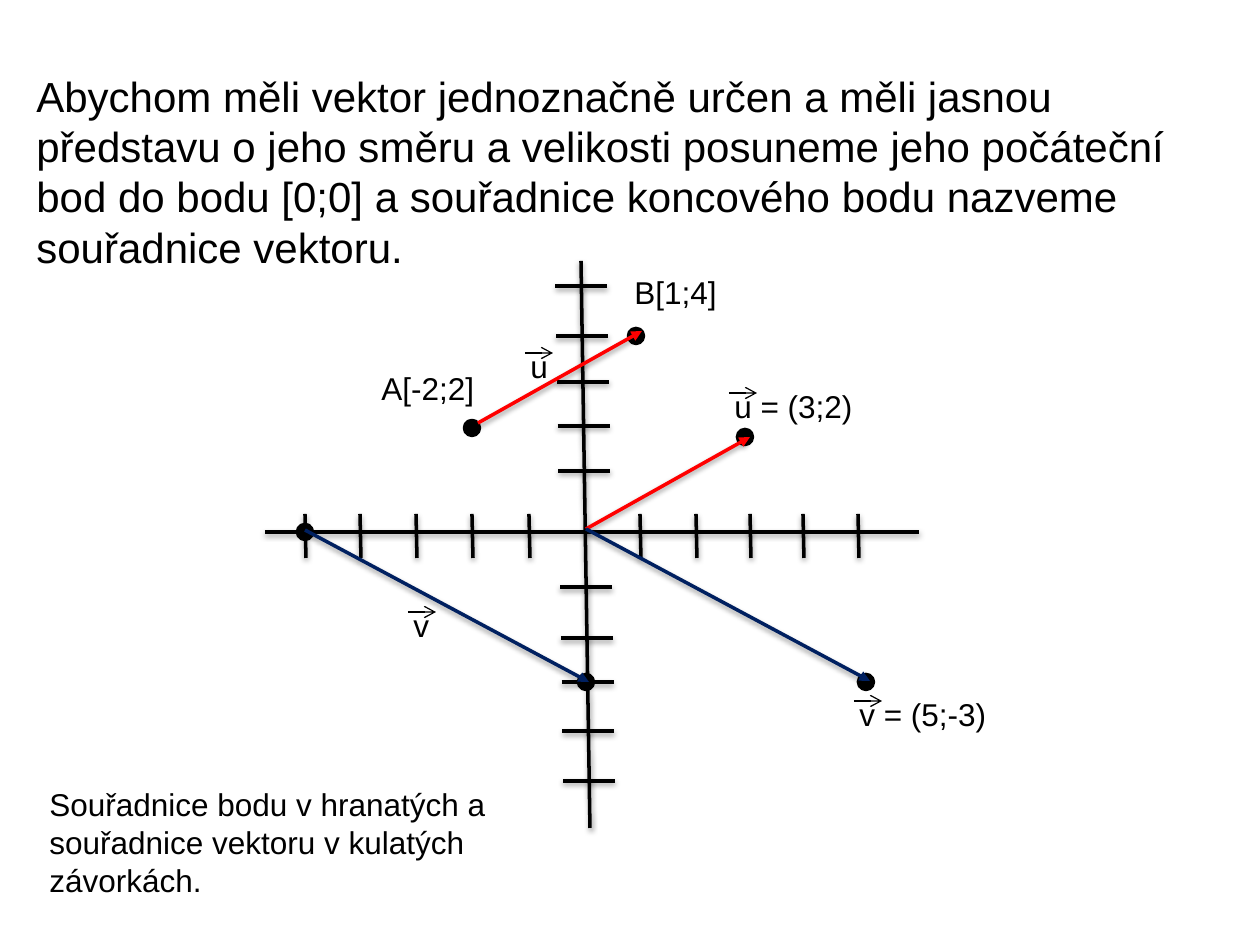
from lxml.etree import SubElement
from pptx import Presentation
from pptx.dml.color import RGBColor
from pptx.enum.shapes import MSO_CONNECTOR, MSO_SHAPE
from pptx.enum.text import MSO_AUTO_SIZE
from pptx.oxml.ns import qn
from pptx.util import Pt

PX = 9144000 / 1260
COLORS = {"ink": "000000", "u": "FF0000", "v": "002060"}
DIAGRAM = (265, 261, 654, 567)
INTRO = (24, 64, 1210, 217)
NOTE = (37, 779, 474, 127)

# Diagram positions are px from the top left corner of its box.
X_AXIS_TOP = 271
Y_AXIS_START, Y_AXIS_SLANT = 316, 9
X_TICKS = (40, 95, 151, 207, 264, 375, 431, 485, 538, 593)
Y_TICKS = (25, 75, 121, 165, 210, 326, 377, 421, 470, 520)
X_TICK_LENGTH, Y_TICK_LENGTH = 44, 52
DOT = 15
DOTS = ((601, 421), (40, 271), (321, 421), (480, 176), (207, 167), (371, 75))
VECTOR_STEPS = {"u": (164, -92), "v": (284, 152)}
VECTORS = (("u", 213, 162), ("u", 321, 268), ("v", 40, 269), ("v", 321, 268))
POINT_LABELS = (("A[-2;2]", 104, 102, 120), ("B[1;4]", 357, 6, 108))
VECTOR_LABELS = (("u", 253, 80, 43), ("u = (3;2)", 457, 120, 150),
                 ("v", 136, 339, 42), ("v = (5;-3)", 582, 428, 154))
LABEL_HEIGHT = 50


def emu(*pixels):
    return [round(pixel * PX) for pixel in pixels]


def color(name):
    return RGBColor.from_string(COLORS[name])


def add_text(slide, box, lines, size=18, wrap=False):
    frame = slide.shapes.add_textbox(*emu(*box)).text_frame
    frame.word_wrap = wrap
    frame.auto_size = MSO_AUTO_SIZE.SHAPE_TO_FIT_TEXT
    frame.text = "\n".join(lines)
    font_format = {"name": "Arial", "size": Pt(size)}
    for paragraph in frame.paragraphs:
        for run in paragraph.runs:
            for attribute, value in font_format.items():
                setattr(run.font, attribute, value)
            run.font.color.rgb = color("ink")


def add_line(slide, start, end, name="ink", width=2, head=None, shadow=True):
    connector = slide.shapes.add_connector(
        MSO_CONNECTOR.STRAIGHT, *emu(*start, *end))
    connector.line.width = Pt(width)
    connector.line.color.rgb = color(name)
    if head:
        SubElement(connector.line._get_or_add_ln(), qn("a:tailEnd"), type=head)
    effects = SubElement(connector._element.spPr, qn("a:effectLst"))
    if shadow:
        outer = SubElement(effects, qn("a:outerShdw"), blurRad="40000",
                           dist="20000", dir="5400000", rotWithShape="0")
        shade = SubElement(outer, qn("a:srgbClr"), val=COLORS["ink"])
        SubElement(shade, qn("a:alpha"), val="38000")


def add_dots(slide, box):
    left, top = box[:2]
    for x, y in DOTS:
        dot = slide.shapes.add_shape(MSO_SHAPE.OVAL, *emu(
            left + x - DOT / 2, top + y - DOT / 2, DOT, DOT))
        dot.shadow.inherit = False
        dot.fill.solid()
        dot.fill.fore_color.rgb = color("ink")
        dot.line.color.rgb = color("ink")
        dot.line.width = Pt(2)


def add_axes(slide, box):
    """Draw both axes; the vertical one leans, and its ticks follow it."""
    left, top, width, height = box
    axis_left, axis_top = left + Y_AXIS_START, top + X_AXIS_TOP
    add_line(slide, (axis_left, top), (axis_left + Y_AXIS_SLANT, top + height))
    add_line(slide, (left, axis_top), (left + width, axis_top))
    tick_top = axis_top - 18
    for x in X_TICKS:
        add_line(slide, (left + x, tick_top),
                 (left + x + 1, tick_top + X_TICK_LENGTH))
    for y in Y_TICKS:
        tick_left = axis_left + Y_AXIS_SLANT * y / height - Y_TICK_LENGTH / 2
        add_line(slide, (tick_left, top + y),
                 (tick_left + Y_TICK_LENGTH, top + y))


def add_vectors(slide, box):
    left, top = box[:2]
    for name, x, y in VECTORS:
        step_x, step_y = VECTOR_STEPS[name]
        add_line(slide, (left + x, top + y),
                 (left + x + step_x, top + y + step_y), name, head="triangle")


def add_labels(slide, box):
    """Name points and vectors; vector names carry a small arrow on top."""
    left, top = box[:2]
    for text, x, y, width in POINT_LABELS + VECTOR_LABELS:
        add_text(slide, (left + x, top + y, width, LABEL_HEIGHT), [text])
    for _, x, y, _ in VECTOR_LABELS:
        start_x, arrow_y = left + x + 7, top + y + 12
        add_line(slide, (start_x, arrow_y), (start_x + 28, arrow_y),
                 width=0.75, head="arrow", shadow=False)


def add_diagram(slide, box):
    for add_part in (add_dots, add_axes, add_vectors, add_labels):
        add_part(slide, box)


def main():
    presentation = Presentation()
    presentation.slide_width, presentation.slide_height = emu(1260, 945)
    slide = presentation.slides.add_slide(presentation.slide_layouts[6])
    add_diagram(slide, DIAGRAM)
    add_text(slide, INTRO, [
        "Abychom měli vektor jednoznačně určen a měli jasnou představu o jeho "
        "směru a velikosti posuneme jeho počáteční bod do bodu [0;0] a "
        "souřadnice koncového bodu nazveme souřadnice vektoru."],
        size=24, wrap=True)
    add_text(slide, NOTE, ["Souřadnice bodu v hranatých a",
                           "souřadnice vektoru v kulatých", "závorkách."])
    presentation.save("out.pptx")


if __name__ == "__main__":
    main()
